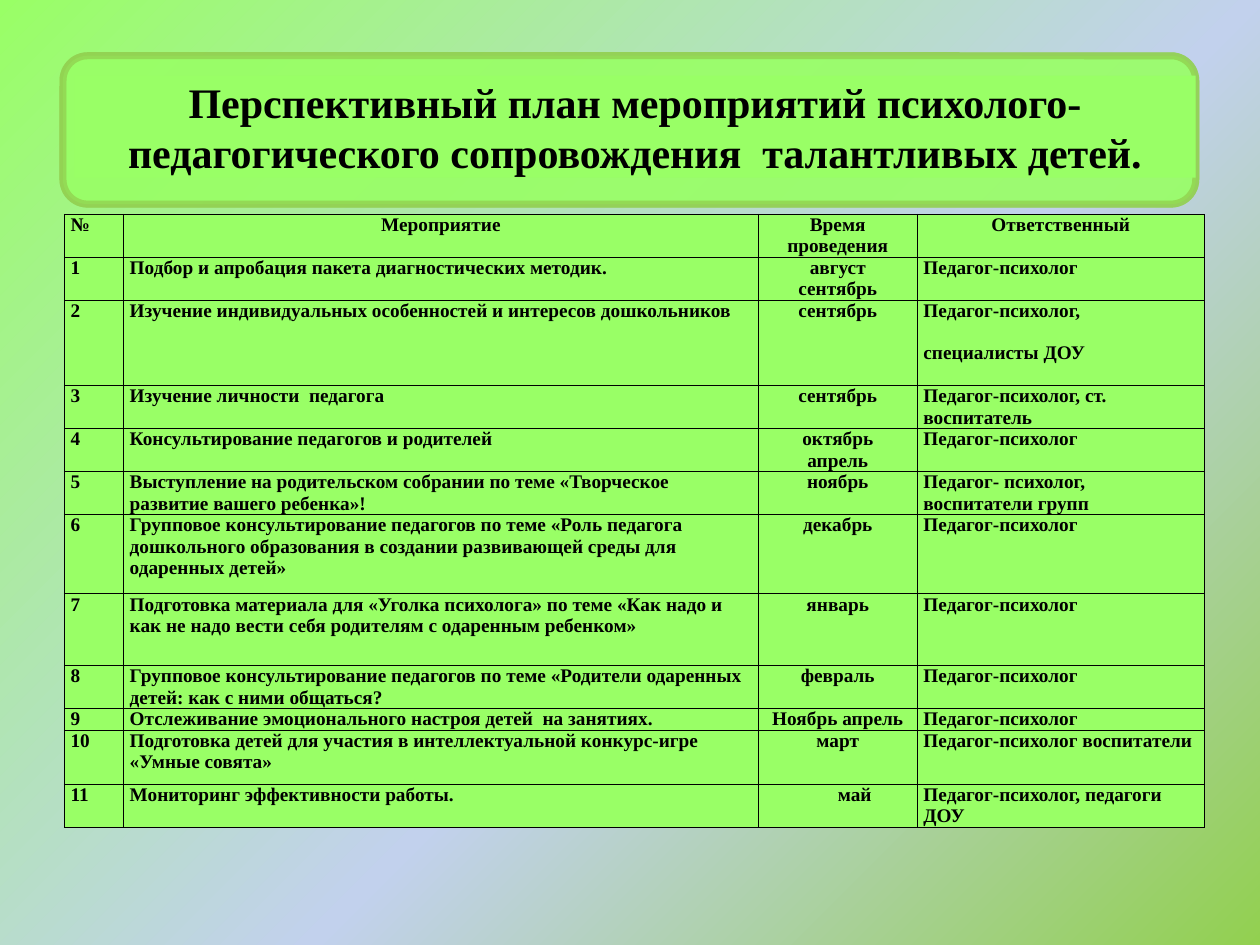
from copy import deepcopy

from lxml.etree import SubElement
from pptx import Presentation
from pptx.dml.color import RGBColor
from pptx.enum.shapes import MSO_SHAPE
from pptx.enum.text import MSO_ANCHOR, PP_ALIGN
from pptx.oxml.ns import qn
from pptx.util import Inches, Pt

SLIDE_WIDTH, SLIDE_HEIGHT = Inches(10), Inches(7.5)
FONT = "Times New Roman"
LIME, GREEN, BLUE, BLACK = "99FF66", "92D050", "C2D1ED", "000000"

COLUMN_WIDTHS = [0.47, 5.04, 1.26, 2.28]
TIME_COLUMN = 2
MAY_INDENT = 0.58
PSYCHOLOGIST = "Педагог-психолог"
TITLE = "Перспективный план мероприятий психолого-педагогического сопровождения  талантливых детей."
HEADINGS = ["№", "Мероприятие", "Время\nпроведения", "Ответственный"]

# Row height in inches, activity, time, person responsible
ACTIVITIES = [
    (0.34, "Подбор и апробация пакета диагностических методик.", "август\nсентябрь", PSYCHOLOGIST),
    (0.68, "Изучение индивидуальных особенностей и интересов дошкольников", "сентябрь",
     "Педагог-психолог,\nспециалисты ДОУ"),
    (0.34, "Изучение личности  педагога", "сентябрь", "Педагог-психолог, ст. воспитатель"),
    (0.34, "Консультирование педагогов и родителей", "октябрь\nапрель", PSYCHOLOGIST),
    (0.34, "Выступление на родительском собрании по теме «Творческое развитие вашего ребенка»!",
     "ноябрь", "Педагог- психолог, воспитатели групп"),
    (0.63, "Групповое консультирование педагогов по теме «Роль педагога дошкольного образования "
     "в создании развивающей среды для одаренных детей»", "декабрь", PSYCHOLOGIST),
    (0.57, "Подготовка материала для «Уголка психолога» по теме «Как надо и как не надо вести "
     "себя родителям с одаренным ребенком»", "январь", PSYCHOLOGIST),
    (0.34, "Групповое консультирование педагогов по теме «Родители одаренных детей: "
     "как с ними общаться?", "февраль", PSYCHOLOGIST),
    (0.17, "Отслеживание эмоционального настроя детей  на занятиях.", "Ноябрь апрель", PSYCHOLOGIST),
    (0.43, "Подготовка детей для участия в интеллектуальной конкурс-игре «Умные совята»",
     "март", "Педагог-психолог воспитатели"),
    (0.34, "Мониторинг эффективности работы.", "май", "Педагог-психолог, педагоги ДОУ"),
]


def paint(color_format, hex_color):
    color_format.rgb = RGBColor.from_string(hex_color)


def fill_solid(fill, hex_color):
    fill.solid()
    paint(fill.fore_color, hex_color)


def set_opacity(color_parent, percent):
    color = color_parent.find(qn("a:solidFill")).find(qn("a:srgbClr"))
    SubElement(color, qn("a:alpha")).set("val", str(percent * 1000))


def box(left, top, width, height):
    """Turn shares of the slide into a position and a size."""
    return (int(SLIDE_WIDTH * left), int(SLIDE_HEIGHT * top),
            int(SLIDE_WIDTH * width), int(SLIDE_HEIGHT * height))


def style_text(paragraph, size, alignment):
    paragraph.alignment = alignment
    for run in paragraph.runs:
        run.font.name = FONT
        run.font.size = Pt(size)
        run.font.bold = True
        paint(run.font.color, BLACK)


def add_background(slide):
    fill = slide.background.fill
    fill.gradient()
    fill.gradient_angle = 315
    stop_list = next(slide.element.iter(qn("a:gsLst")))
    stop_list.append(deepcopy(stop_list[-1]))
    for stop, (position, color) in zip(fill.gradient_stops, [(0, LIME), (0.57, BLUE), (1, GREEN)]):
        stop.position = position
        paint(stop.color, color)


def add_title_frame(slide, fill_opacity):
    frame = slide.shapes.add_shape(MSO_SHAPE.ROUNDED_RECTANGLE, *box(0.05, 0.059, 0.899, 0.157))
    frame.shadow.inherit = False
    fill_solid(frame.fill, LIME)
    paint(frame.line.color, GREEN)
    frame.line.width = Pt(4)
    properties = frame.element.spPr
    set_opacity(properties, fill_opacity)
    set_opacity(properties.find(qn("a:ln")), 71)


def add_title(slide):
    title = slide.shapes.add_textbox(*box(0.059, 0.08, 0.89, 0.108))
    fill_solid(title.fill, LIME)
    frame = title.text_frame
    frame.word_wrap = True
    frame.vertical_anchor = MSO_ANCHOR.MIDDLE
    frame.margin_left = frame.margin_right = frame.margin_top = frame.margin_bottom = 0
    frame.text = TITLE
    style_text(frame.paragraphs[0], 24, PP_ALIGN.CENTER)


def add_borders(cell):
    properties = cell._tc.get_or_add_tcPr()
    for side in ("lnL", "lnR", "lnT", "lnB"):
        border = SubElement(properties, qn(f"a:{side}"), w=str(Pt(0.5)))
        SubElement(SubElement(border, qn("a:solidFill")), qn("a:srgbClr"), val=BLACK)


def write_cell(cell, text, centred):
    add_borders(cell)
    fill_solid(cell.fill, LIME)
    cell.margin_left = cell.margin_right = Inches(0.05)
    cell.margin_top = cell.margin_bottom = 0
    cell.text_frame.text = text
    for paragraph in cell.text_frame.paragraphs:
        style_text(paragraph, 11, PP_ALIGN.CENTER if centred else PP_ALIGN.LEFT)


def add_plan(slide):
    heights = [0.34] + [activity[0] for activity in ACTIVITIES]
    rows = [HEADINGS] + [[str(number), *activity[1:]]
                         for number, activity in enumerate(ACTIVITIES, 1)]
    plan = slide.shapes.add_table(len(rows), len(COLUMN_WIDTHS), Inches(0.51), Inches(1.7),
                                  Inches(sum(COLUMN_WIDTHS)), Inches(sum(heights))).table
    plan.first_row = plan.horz_banding = False
    for column, width in zip(plan.columns, COLUMN_WIDTHS):
        column.width = Inches(width)
    for row_index, (height, texts) in enumerate(zip(heights, rows)):
        plan.rows[row_index].height = Inches(height)
        for column_index, text in enumerate(texts):
            centred = column_index == TIME_COLUMN or (row_index == 0 and column_index > 0)
            write_cell(plan.cell(row_index, column_index), text, centred)

    specialists = plan.cell(2, 3).text_frame.paragraphs[1]
    specialists.space_before = Pt(12)
    may = plan.cell(len(ACTIVITIES), TIME_COLUMN).text_frame.paragraphs[0]
    may.alignment = PP_ALIGN.LEFT
    may._p.get_or_add_pPr().set("marL", str(Inches(MAY_INDENT)))


def main():
    presentation = Presentation()
    presentation.slide_width, presentation.slide_height = SLIDE_WIDTH, SLIDE_HEIGHT
    slide = presentation.slides.add_slide(presentation.slide_layouts[6])
    add_background(slide)
    for fill_opacity in (66, 75):
        add_title_frame(slide, fill_opacity)
    add_plan(slide)
    add_title(slide)
    presentation.save("out.pptx")


if __name__ == "__main__":
    main()
